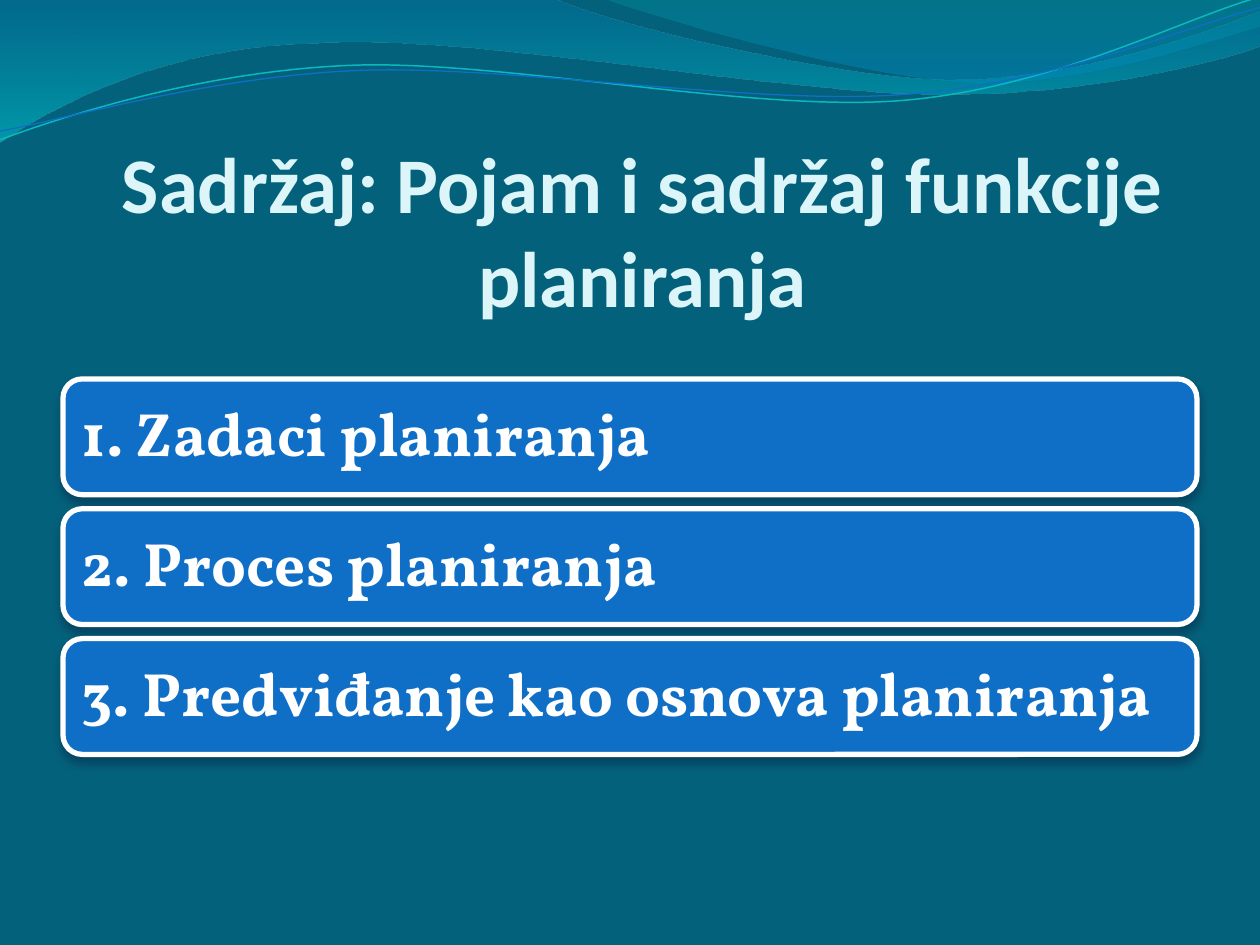
from lxml.etree import SubElement
from pptx import Presentation
from pptx.dml.color import RGBColor
from pptx.enum.shapes import MSO_SHAPE
from pptx.enum.text import MSO_ANCHOR, PP_ALIGN
from pptx.oxml.ns import qn
from pptx.util import Pt

COLORS = {
    "background": "04617B",
    "title": "DBF5F9",
    "bar": "0F6FC6",
    "white": "FFFFFF",
    "shadow": "042747",
    "wave_top": "0074A1",
    "wave_bottom": "00C6CF",
    "crest_top": "00A1A9",
    "crest_bottom": "008BBF",
    "teal_line": "0AB8BF",
    "blue_line": "0F6FC6",
}
TOPICS = ["1. Zadaci planiranja", "2. Proces planiranja", "3. Predviđanje kao osnova planiranja"]

WAVE = [(0, 0), (316.8, -0.7), (342.7, 12.2, 478, 45.4, 545.8, 45.4),
        (614.2, 45.4, 689.8, 18.7, 720, 6.5), (720.7, 25.9),
        (707.8, 31.7, 626.4, 54.7, 537.1, 54), (447.8, 54, 275, 20.2, 185, 24.5),
        (92.9, 25.9, 33.1, 59.8, -0.7, 81.4)]
CREST = [(344.9, -0.7), (366.5, 7.9, 491, 44.6, 553.7, 46.8),
         (616.3, 49.7, 691.9, 23, 720, 15.1), (720, 0)]
TEAL_LINE = [(0, 79.9), (34.6, 67, 113.8, 41, 199.4, 37.4), (284.4, 33.8, 427, 64.1, 513.4, 57.6),
             (599.8, 51.1, 675.4, 10.8, 718.6, -1.4)]
BLUE_LINE = [(0, 74.9), (33.8, 69.1, 118.1, 43.9, 203.8, 40.3), (290.2, 36.7, 429.8, 60.5, 516.2, 54),
             (601.9, 48.2, 677.5, 15.1, 720, 4.3)]


def color(name):
    """Return the named colour."""
    return RGBColor.from_string(COLORS[name])


def write_text(frame, text, *, font, size, fill, align, anchor, insets, spacing=1.0):
    """Write one bold paragraph into a text frame."""
    frame.word_wrap = True
    frame.vertical_anchor = anchor
    frame.margin_left, frame.margin_top, frame.margin_right, frame.margin_bottom = map(Pt, insets)
    para = frame.paragraphs[0]
    para.alignment = align
    para.line_spacing = spacing
    span = para.add_run()
    span.text = text
    span.font.name = font
    span.font.size = Pt(size)
    span.font.bold = True
    span.font.color.rgb = color(fill)


def add_outline(page, box, outline, close):
    """Draw corners and cubic curves relative to the corner of a box."""
    left, top = box[:2]
    points = [(Pt(left + x), Pt(top + y)) for segment in outline
              for x, y in zip(segment[::2], segment[1::2])]
    builder = page.shapes.build_freeform(*points[0])
    builder.add_line_segments(points[1:], close=close)
    shape = builder.convert_to_shape()
    shape.shadow.inherit = False
    steps = iter(list(shape.element.spPr.iter(qn("a:lnTo"))))
    for segment in outline[1:]:
        first = next(steps)
        if len(segment) == 6:
            first.tag = qn("a:cubicBezTo")
            for step in (next(steps), next(steps)):
                first.append(step[0])
                step.getparent().remove(step)
    return shape


def add_wave(page, box, outline, stops):
    """Draw a wave with a translucent downward gradient."""
    shape = add_outline(page, box, outline, True)
    shape.line.fill.background()
    shape.fill.gradient()
    shape.fill.gradient_angle = 270
    for stop, (position, name, _) in zip(shape.fill.gradient_stops, stops):
        stop.position = position
        stop.color.rgb = color(name)
    for element, (_, _, opacity) in zip(shape.element.spPr.iter(qn("a:srgbClr")), stops):
        SubElement(element, qn("a:alpha"), val=str(opacity * 1000))


def add_header(page, box):
    """Draw the waves and thin lines along the top."""
    add_wave(page, box, WAVE, [(0, "wave_top", 45), (1, "wave_bottom", 55)])
    add_wave(page, box, CREST, [(0, "crest_top", 30), (0.8, "crest_bottom", 45)])
    for outline, name, width in [(TEAL_LINE, "teal_line", 0.85), (BLUE_LINE, "blue_line", 0.75)]:
        shape = add_outline(page, box, outline, False)
        shape.fill.background()
        shape.line.color.rgb = color(name)
        shape.line.width = Pt(width)


def add_title(page, box, text):
    """Place the title at the bottom of its box."""
    frame = page.shapes.add_textbox(*map(Pt, box)).text_frame
    write_text(frame, text, font="Calibri", size=45, fill="title", align=PP_ALIGN.CENTER,
               anchor=MSO_ANCHOR.BOTTOM, insets=(0, 3.6, 0, 0))


def add_shadow(shape):
    """Give a shape a soft shadow below it."""
    shape.shadow.inherit = False
    effects = shape.element.spPr.find(qn("a:effectLst"))
    shadow = SubElement(effects, qn("a:outerShdw"), blurRad=str(Pt(4.5)), dist=str(Pt(3)),
                        dir="5400000", algn="ctr", rotWithShape="0")
    tint = SubElement(shadow, qn("a:srgbClr"), val=COLORS["shadow"])
    SubElement(tint, qn("a:alpha"), val="48000")


def add_topics(page, box, topics, gap):
    """Stack one rounded bar per topic with equal gaps."""
    left, top, width, height = box
    bar_height = (height - gap * (len(topics) - 1)) / len(topics)
    for index, topic in enumerate(topics):
        bar_top = top + index * (bar_height + gap)
        bar = page.shapes.add_shape(MSO_SHAPE.ROUNDED_RECTANGLE,
                                    *map(Pt, (left, bar_top, width, bar_height)))
        bar.fill.solid()
        bar.fill.fore_color.rgb = color("bar")
        bar.line.color.rgb = color("white")
        bar.line.width = Pt(3)
        add_shadow(bar)
        write_text(bar.text_frame, topic, font="Vollkorn", size=35, fill="white", align=PP_ALIGN.LEFT,
                   anchor=MSO_ANCHOR.MIDDLE, insets=(7.4, 10.8, 7.4, 10.8), spacing=0.9)


def main():
    """Build and save the contents slide."""
    deck = Presentation()
    deck.slide_width, deck.slide_height = Pt(720), Pt(540)
    page = deck.slides.add_slide(deck.slide_layouts[6])
    page.background.fill.solid()
    page.background.fill.fore_color.rgb = color("background")
    add_header(page, (0, 0, 720, 81))
    add_title(page, (14.4, 95, 705.6, 90), "Sadržaj: Pojam i sadržaj funkcije planiranja")
    add_topics(page, (36, 216.5, 648, 214.6), TOPICS, gap=8)
    deck.save("out.pptx")


if __name__ == "__main__":
    main()
